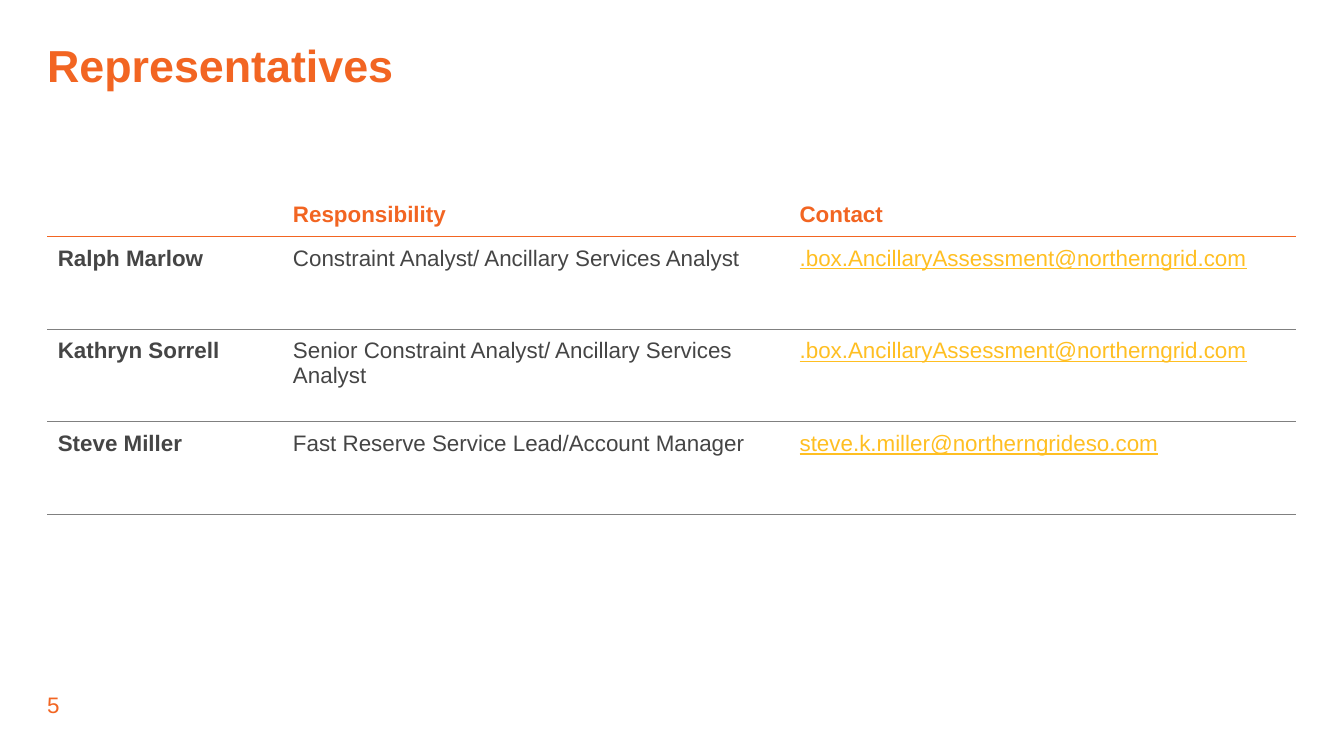
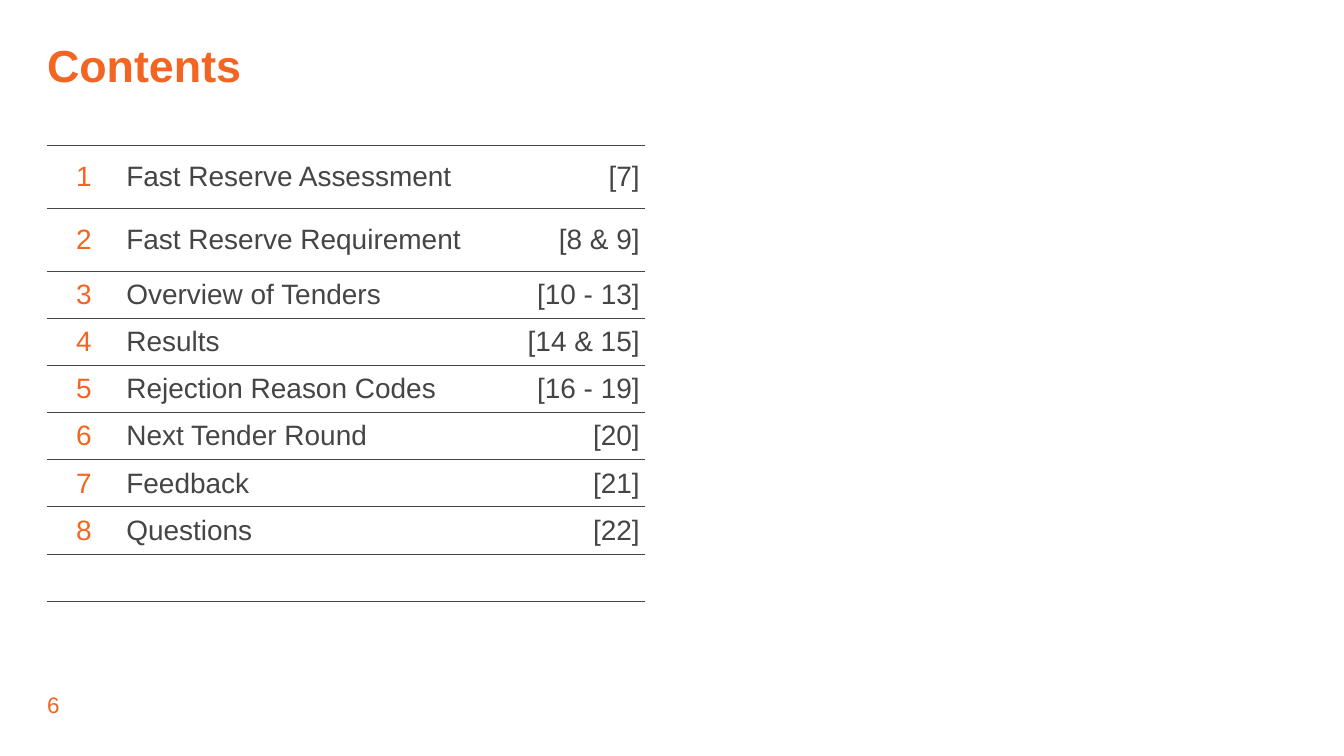
from dataclasses import dataclass

from lxml import etree
from pptx import Presentation
from pptx.dml.color import RGBColor
from pptx.enum import text
from pptx.oxml import ns
from pptx.util import Inches, Pt

FONT = "Arial"
ORANGE = "F26522"
CHARCOAL = "454545"
GREY = "808080"
AMBER = "FFBF22"
LEFT = 0.35
ALIGN = text.PP_ALIGN
ANCHOR = text.MSO_ANCHOR


@dataclass(frozen=True)
class TextStyle:
    size: float
    color: str
    bold: bool = False
    underline: bool = False
    align: ALIGN = ALIGN.LEFT
    line_spacing: float = 1.0


@dataclass(frozen=True)
class Rule:
    color: str
    width: float


@dataclass(frozen=True)
class Column:
    width: float
    style: TextStyle


@dataclass(frozen=True)
class TableDesign:
    top: float
    columns: list[Column]
    row_heights: list[float]
    rules: list[Rule | None]
    margins: tuple[float, float]
    anchor: ANCHOR
    header: TextStyle | None = None


TITLE = TextStyle(24, ORANGE, bold=True, line_spacing=0.8)
PAGE_NUMBER = TextStyle(12, ORANGE)

REPRESENTATIVES = [
    ("", "Responsibility", "Contact"),
    ("Ralph Marlow", "Constraint Analyst/ Ancillary Services Analyst",
     ".box.AncillaryAssessment@northerngrid.com"),
    ("Kathryn Sorrell", "Senior Constraint Analyst/ Ancillary Services Analyst",
     ".box.AncillaryAssessment@northerngrid.com"),
    ("Steve Miller", "Fast Reserve Service Lead/Account Manager",
     "steve.k.miller@northerngrideso.com"),
]
REPRESENTATIVES_DESIGN = TableDesign(
    top=1.4,
    columns=[
        Column(1.75, TextStyle(12, CHARCOAL, bold=True)),
        Column(3.77, TextStyle(12, CHARCOAL)),
        Column(3.77, TextStyle(12, AMBER, underline=True)),
    ],
    row_heights=[0.35] + [0.69] * 3,
    rules=[None, Rule(ORANGE, 1)] + [Rule(GREY, 0.5)] * 3,
    margins=(0.08, 0.07),
    anchor=ANCHOR.TOP,
    header=TextStyle(12, ORANGE, bold=True, line_spacing=1.1),
)

SECTIONS = [
    ("Fast Reserve Assessment", "[7]"),
    ("Fast Reserve Requirement", "[8 & 9]"),
    ("Overview of Tenders", "[10 - 13]"),
    ("Results", "[14 & 15]"),
    ("Rejection Reason Codes", "[16 - 19]"),
    ("Next Tender Round", "[20]"),
    ("Feedback", "[21]"),
    ("Questions", "[22]"),
]
CONTENTS = [(str(number), *section) for number, section in enumerate(SECTIONS, 1)]
CONTENTS.append(("", "", ""))
CONTENTS_DESIGN = TableDesign(
    top=1.08,
    columns=[
        Column(0.55, TextStyle(15, ORANGE, align=ALIGN.CENTER)),
        Column(2.91, TextStyle(15, CHARCOAL)),
        Column(0.99, TextStyle(15, CHARCOAL, align=ALIGN.RIGHT)),
    ],
    row_heights=[0.47] * 2 + [0.35] * 7,
    rules=[Rule(CHARCOAL, 0.5)] * 10,
    margins=(0.04, 0.05),
    anchor=ANCHOR.MIDDLE,
)


def rgb(color: str) -> RGBColor:
    return RGBColor.from_string(color)


def write(frame, content: str, style: TextStyle) -> None:
    paragraph = frame.paragraphs[0]
    paragraph.alignment = style.align
    paragraph.line_spacing = style.line_spacing
    paragraph.font.name = FONT
    paragraph.font.size = Pt(style.size)
    paragraph.font.bold = style.bold
    paragraph.font.underline = style.underline
    paragraph.font.color.rgb = rgb(style.color)
    if content:
        paragraph.add_run().text = content
    else:
        end = etree.SubElement(paragraph._p, ns.qn("a:endParaRPr"))
        end.set("sz", str(int(style.size * 100)))


def add_text(slide, content: str, top: float, width: float, height: float,
             style: TextStyle) -> None:
    shape = slide.shapes.add_textbox(
        Inches(LEFT), Inches(top), Inches(width), Inches(height))
    frame = shape.text_frame
    frame.word_wrap = True
    frame.margin_left = frame.margin_right = 0
    frame.margin_top = frame.margin_bottom = 0
    write(frame, content, style)


def set_border(cell, side: str, rule: Rule | None) -> None:
    line = etree.SubElement(cell._tc.get_or_add_tcPr(), ns.qn(f"a:ln{side}"))
    if rule is None:
        etree.SubElement(line, ns.qn("a:noFill"))
        return
    line.set("w", str(Pt(rule.width)))
    fill = etree.SubElement(line, ns.qn("a:solidFill"))
    etree.SubElement(fill, ns.qn("a:srgbClr")).set("val", rule.color)


def add_ruled_table(slide, rows: list[tuple[str, ...]], design: TableDesign) -> None:
    width = sum(column.width for column in design.columns)
    table = slide.shapes.add_table(
        len(rows), len(design.columns), Inches(LEFT), Inches(design.top),
        Inches(width), Inches(sum(design.row_heights))).table
    table.first_row = table.horz_banding = False
    for table_column, column in zip(table.columns, design.columns):
        table_column.width = Inches(column.width)
    side_margin, edge_margin = map(Inches, design.margins)
    for row_index, row in enumerate(rows):
        table.rows[row_index].height = Inches(design.row_heights[row_index])
        is_header = design.header is not None and row_index == 0
        for column_index, content in enumerate(row):
            cell = table.cell(row_index, column_index)
            cell.margin_left = cell.margin_right = side_margin
            cell.margin_top = cell.margin_bottom = edge_margin
            cell.vertical_anchor = ANCHOR.BOTTOM if is_header else design.anchor
            set_border(cell, "L", None)
            set_border(cell, "R", None)
            set_border(cell, "T", design.rules[row_index])
            set_border(cell, "B", design.rules[row_index + 1])
            cell.fill.background()
            style = design.header if is_header else design.columns[column_index].style
            write(cell.text_frame, content, style)


def add_slide(presentation, title: str, page: int, rows: list[tuple[str, ...]],
              design: TableDesign) -> None:
    slide = presentation.slides.add_slide(presentation.slide_layouts[6])
    add_text(slide, str(page), 5.14, 0.91, 0.2, PAGE_NUMBER)
    add_text(slide, title, 0.36, 9.29, 0.32, TITLE)
    add_ruled_table(slide, rows, design)


def main() -> None:
    presentation = Presentation()
    presentation.slide_width = Inches(10)
    presentation.slide_height = Inches(10 * 9 / 16)
    add_slide(presentation, "Representatives", 5, REPRESENTATIVES, REPRESENTATIVES_DESIGN)
    add_slide(presentation, "Contents", 6, CONTENTS, CONTENTS_DESIGN)
    presentation.save("out.pptx")


if __name__ == "__main__":
    main()
